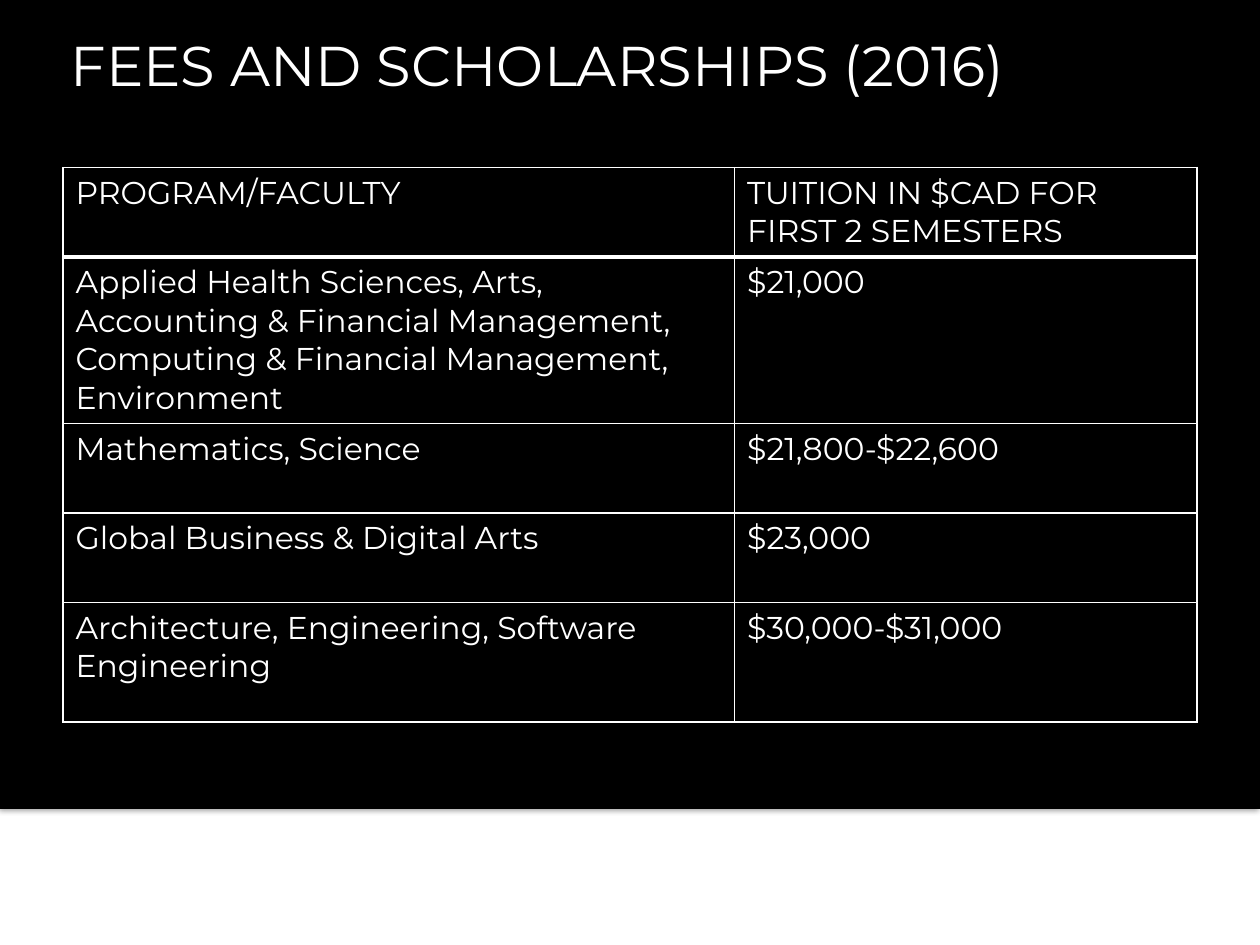
import pptx
import pptx.dml.color
import pptx.enum.shapes
import pptx.enum.text
import pptx.oxml
import pptx.oxml.ns
import pptx.util
from lxml import etree

BLACK = pptx.dml.color.RGBColor(0x00, 0x00, 0x00)
WHITE = pptx.dml.color.RGBColor(0xFF, 0xFF, 0xFF)
FONT = "Montserrat"
COLUMNS = [5.33, 3.67]
ROWS = [0.71, 1.32, 0.71, 0.71, 0.95]
FEES = [
    ("PROGRAM/FACULTY", "TUITION IN $CAD FOR FIRST 2 SEMESTERS"),
    ("Applied Health Sciences, Arts, Accounting & Financial Management, "
     "Computing & Financial Management, Environment", "$21,000"),
    ("Mathematics, Science", "$21,800-$22,600"),
    ("Global Business & Digital Arts", "$23,000"),
    ("Architecture, Engineering, Software Engineering", "$30,000-$31,000"),
]


def format_text(paragraph, size):
    for run in paragraph.runs:
        run.font.name = FONT
        run.font.size = pptx.util.Pt(size)
        run.font.color.rgb = WHITE


def add_border(cell, side, width):
    # Borders come before the fill in the cell properties
    properties = cell._tc.get_or_add_tcPr()
    line = pptx.oxml.parse_xml(
        f'<a:{side} {pptx.oxml.ns.nsdecls("a")} w="{pptx.util.Pt(width)}">'
        f'<a:solidFill><a:srgbClr val="{WHITE}"/></a:solidFill></a:{side}>')
    properties.append(line)


presentation = pptx.Presentation()
presentation.slide_width = pptx.util.Inches(10)
presentation.slide_height = pptx.util.Inches(7.5)
slide = presentation.slides.add_slide(presentation.slide_layouts[5])

# Black panel with a soft shadow, behind everything
panel = slide.shapes.add_shape(
    pptx.enum.shapes.MSO_SHAPE.RECTANGLE, 0, 0,
    presentation.slide_width, pptx.util.Inches(6.42))
panel.fill.solid()
panel.fill.fore_color.rgb = BLACK
panel.line.fill.background()
panel._element.spPr.append(pptx.oxml.parse_xml(
    f'<a:effectLst {pptx.oxml.ns.nsdecls("a")}>'
    f'<a:outerShdw blurRad="{pptx.util.Pt(3.1)}" dist="{pptx.util.Pt(1.8)}" '
    'dir="5400000" rotWithShape="0">'
    f'<a:srgbClr val="{BLACK}"><a:alpha val="35000"/></a:srgbClr>'
    '</a:outerShdw></a:effectLst>'))
slide.shapes._spTree.insert(2, panel._element)

# Title on a translucent band
title = slide.shapes.title
title.left, title.top = pptx.util.Inches(0.02), pptx.util.Inches(0.17)
title.width, title.height = pptx.util.Inches(10.01), pptx.util.Inches(0.67)
title.fill.solid()
title.fill.fore_color.rgb = BLACK
color = title._element.spPr.find(".//" + pptx.oxml.ns.qn("a:srgbClr"))
etree.SubElement(color, pptx.oxml.ns.qn("a:alpha")).set("val", "37000")
title.text_frame.text = "FEES AND SCHOLARSHIPS (2016)"
title.text_frame.word_wrap = True
title.text_frame.auto_size = pptx.enum.text.MSO_AUTO_SIZE.NONE
title.text_frame.vertical_anchor = pptx.enum.text.MSO_ANCHOR.MIDDLE
heading = title.text_frame.paragraphs[0]
heading.alignment = pptx.enum.text.PP_ALIGN.LEFT
heading._p.get_or_add_pPr().set("marL", str(pptx.util.Inches(0.44)))
format_text(heading, 32)

# Fee table
table = slide.shapes.add_table(
    len(ROWS), len(COLUMNS), pptx.util.Inches(0.5), pptx.util.Inches(1.33),
    pptx.util.Inches(sum(COLUMNS)), pptx.util.Inches(sum(ROWS))).table
table.horz_banding = False
for column, width in zip(table.columns, COLUMNS):
    column.width = pptx.util.Inches(width)
for row_index, (row, height) in enumerate(zip(table.rows, ROWS)):
    row.height = pptx.util.Inches(height)
    for cell, text in zip(row.cells, FEES[row_index]):
        cell.text = text
        format_text(cell.text_frame.paragraphs[0], 18)
        for run in cell.text_frame.paragraphs[0].runs:
            run.font.bold = False
        # The rule under the header row is heavier
        add_border(cell, "lnL", 1)
        add_border(cell, "lnR", 1)
        add_border(cell, "lnT", 3 if row_index == 1 else 1)
        add_border(cell, "lnB", 3 if row_index == 0 else 1)
        cell.fill.solid()
        cell.fill.fore_color.rgb = BLACK

presentation.save("out.pptx")
